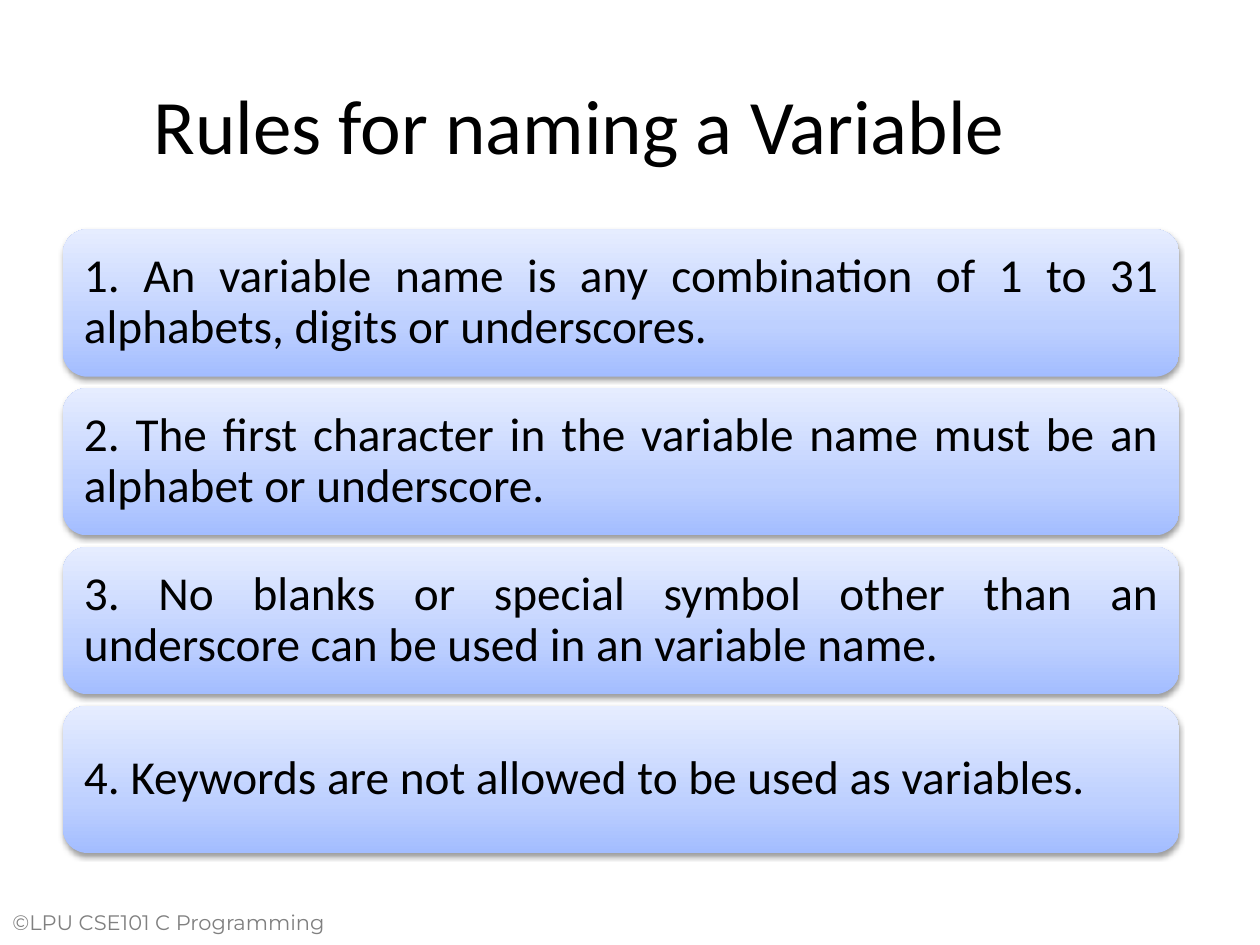
from copy import deepcopy

from lxml.etree import SubElement
from pptx import Presentation
from pptx.dml.color import RGBColor
from pptx.enum.shapes import MSO_SHAPE
from pptx.enum.text import MSO_ANCHOR, PP_ALIGN
from pptx.oxml.ns import qn
from pptx.util import Emu, Pt

EMU_PER_PX = 9144  # 100 px to the inch


def px(length):
    return Emu(length * EMU_PER_PX)


def color(hex_text):
    return RGBColor.from_string(hex_text)


class RuleSlide:
    """Holds the style and the current slide."""

    TITLE = {"size": Pt(44), "name": "Calibri"}
    RULE = {"size": Pt(27), "name": "Calibri"}
    FOOTER = {"size": Pt(12), "name": "Montserrat"}
    GRADIENT = [(0, "A3BDFF"), (0.35, "BED0FF"), (1, "E6EDFF")]
    SHADOW = {"blurRad": "40000", "dist": "20000", "dir": "5400000", "rotWithShape": "0"}

    def __init__(self, prs):
        self.slide = prs.slides.add_slide(prs.slide_layouts[6])

    def set_text(self, frame, text, font, ink, frame_format, paragraph_format):
        frame.word_wrap = True
        paragraph = frame.paragraphs[0]
        paragraph.text = text
        formats = [(frame, frame_format), (paragraph, paragraph_format), (paragraph.font, font)]
        for target, values in formats:
            for attribute, value in values.items():
                setattr(target, attribute, value)
        paragraph.font.color.rgb = color(ink)

    def label(self, box, text, font, ink="000000", align=PP_ALIGN.LEFT, anchor=MSO_ANCHOR.TOP):
        frame = self.slide.shapes.add_textbox(*map(px, box)).text_frame
        self.set_text(frame, text, font, ink, {"vertical_anchor": anchor}, {"alignment": align})

    def rule_card(self, box, text):
        card = self.slide.shapes.add_shape(MSO_SHAPE.ROUNDED_RECTANGLE, *map(px, box))
        card.line.fill.background()
        self.shade(card)
        self.drop_shadow(card)
        inset = px(11)
        frame_format = {f"margin_{side}": inset for side in ("left", "top", "right", "bottom")}
        frame_format["vertical_anchor"] = MSO_ANCHOR.MIDDLE
        self.set_text(card.text_frame, text, self.RULE, "000000", frame_format,
                      {"alignment": PP_ALIGN.JUSTIFY, "line_spacing": 0.9})

    def shade(self, card):
        card.fill.gradient()
        card.fill.gradient_angle = 90
        stop_list = card.element.spPr.find(".//" + qn("a:gsLst"))
        stop_list.append(deepcopy(stop_list[0]))
        for stop, (position, tone) in zip(card.fill.gradient_stops, self.GRADIENT):
            stop.position = position
            stop.color.rgb = color(tone)

    def drop_shadow(self, card):
        card.shadow.inherit = False
        effects = card.element.spPr.find(qn("a:effectLst"))
        shadow = SubElement(effects, qn("a:outerShdw"), self.SHADOW)
        black = SubElement(shadow, qn("a:srgbClr"), val="000000")
        SubElement(black, qn("a:alpha"), val="38000")


RULES = [
    "1. An variable name is any combination of 1 to 31 alphabets, digits or underscores.",
    "2. The first character in the variable name must be an alphabet or underscore.",
    "3. No blanks or special symbol other than an underscore can be used in an variable name.",
    "4. Keywords are not allowed to be used as variables.",
]
FIRST_TOP, CARD_HEIGHT, CARD_GAP = 182, 117, 9


def main():
    prs = Presentation()
    prs.slide_width, prs.slide_height = px(1000), px(750)
    page = RuleSlide(prs)

    # Footer and title
    page.label((0, 717, 300, 42), "©LPU CSE101 C Programming", page.FOOTER, "808080")
    page.label((17, 42, 886, 112), "Rules for naming a Variable", page.TITLE,
               align=PP_ALIGN.CENTER, anchor=MSO_ANCHOR.MIDDLE)

    # Stack of rules
    for row, rule in enumerate(RULES):
        top = FIRST_TOP + row * (CARD_HEIGHT + CARD_GAP)
        page.rule_card((50, top, 886, CARD_HEIGHT), rule)

    prs.save("out.pptx")


if __name__ == "__main__":
    main()
